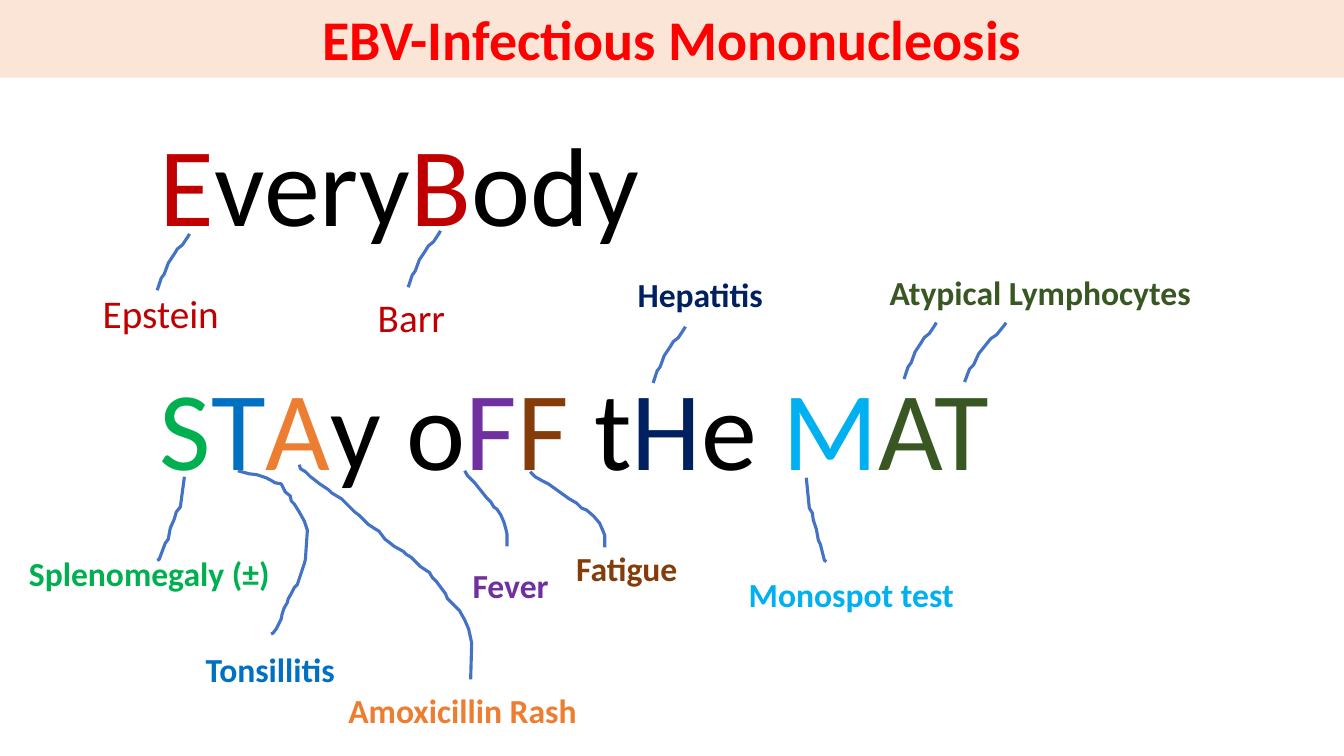
"""Build the EBV infectious mononucleosis mnemonic slide."""
from pptx import Presentation
from pptx.dml.color import RGBColor
from pptx.enum.shapes import MSO_SHAPE
from pptx.enum.text import MSO_ANCHOR as Anchor, MSO_AUTO_SIZE as AutoSize, PP_ALIGN as Align
from pptx.util import Cm, Pt

COLORS = {
    "banner": "FBE5D6", "heading": "FF0000", "stroke": "4472C4", "plain": "000000",
    "virus": "C00000", "spleen": "00B050", "tonsil": "0070C0", "rash": "ED7D31",
    "fever": "7030A0", "fatigue": "843C0B", "liver": "002060", "monospot": "00B0F0",
    "lymphocyte": "385723",
}
MNEMONIC = [
    [("E", "virus"), ("very", "plain"), ("B", "virus"), ("ody", "plain")],
    [("S", "spleen"), ("T", "tonsil"), ("A", "rash"), ("y o", "plain"),
     ("F", "fever"), ("F ", "fatigue"), ("t", "plain"), ("H", "liver"),
     ("e ", "plain"), ("M", "monospot"), ("AT", "lymphocyte")],
]
VIRUS_NAMES = [("Epstein", 2.34, 7.16, 3.48), ("Barr", 9.27, 7.26, 2.24)]
SYMPTOMS = [
    ("Splenomegaly (±)", "spleen", 0.48, 13.82, 6.64),
    ("Tonsillitis", "tonsil", 4.93, 16.23, 3.81),
    ("Amoxicillin Rash", "rash", 8.53, 17.27, 6.32),
    ("Fever", "fever", 11.66, 14.1, 2.46),
    ("Fatigue", "fatigue", 14.27, 13.67, 3.1),
    ("Hepatitis", "liver", 15.82, 6.78, 3.71),
    ("Monospot test", "monospot", 18.62, 14.33, 5.74),
    ("Atypical Lymphocytes", "lymphocyte", 22.17, 6.73, 8.18),
]

RISING = [(0, 60), (4, 48), (7, 44), (11, 33), (17, 24), (20, 19), (25, 15), (31, 6), (32, 4)]
FALLING = [(0, 0), (-4, 30), (-8, 35), (-10, 42), (-14, 51), (-16, 62), (-19, 66),
           (-25, 82), (-27, 83)]
BENDING = [(0, 0), (3, 5), (7, 9), (10, 12), (14, 17), (18, 22), (22, 27), (26, 31),
           (29, 36), (32, 38), (36, 44), (39, 51), (41, 58), (42, 63), (42, 75)]
TO_TONSILLITIS = [
    (0, 0), (11, 3), (19, 4), (28, 7), (32, 9), (37, 12), (43, 13), (47, 21), (52, 25),
    (53, 30), (56, 33), (61, 41), (66, 50), (69, 59), (67, 88), (66, 92), (59, 113),
    (56, 116), (53, 122), (50, 127), (49, 131), (46, 136), (44, 142), (43, 147),
    (40, 153), (38, 157), (35, 161), (33, 162)]
TO_RASH = [
    (0, 0), (1, 4), (6, 7), (11, 12), (15, 15), (20, 19), (29, 25), (32, 28), (42, 34),
    (50, 42), (55, 47), (59, 50), (68, 59), (74, 63), (79, 66), (85, 74), (89, 77),
    (94, 81), (103, 86), (106, 89), (111, 92), (120, 101), (129, 107), (132, 112),
    (136, 116), (142, 124), (145, 128), (147, 133), (151, 137), (159, 145), (164, 154),
    (168, 163), (171, 177), (170, 213)]
STROKES = [
    (RISING, 156, 228, 1, 1), (RISING, 405, 225, 1, 1), (RISING, 648, 320, 1, 1),
    (RISING, 897, 316, 1, 1), (RISING, 957, 316, 1.28, 1.05),
    (FALLING, 183, 473, 1, 1), (FALLING, 800, 474, -0.74, 1),
    (BENDING, 461, 467, 1, 1), (BENDING, 526, 468, 1.76, 1),
    (TO_TONSILLITIS, 236, 467, 1, 1), (TO_RASH, 297, 461, 1, 1),
]


class MnemonicSlide:
    """Hold the slide and its style, and draw each kind of element."""

    font = "Calibri"
    stroke_unit = Cm(2.54) / 100

    def __init__(self, slide):
        """Keep the slide that receives the elements."""
        self.shapes = slide.shapes

    def color(self, key):
        """Return the named colour."""
        return RGBColor.from_string(COLORS[key])

    def run(self, paragraph, words, key, size, bold=False):
        """Add one styled run."""
        run = paragraph.add_run()
        run.text = words
        run.font.name = self.font
        run.font.size = Pt(size)
        run.font.bold = bold
        run.font.color.rgb = self.color(key)

    def banner(self, words):
        """Draw the heading band across the top."""
        band = self.shapes.add_shape(MSO_SHAPE.RECTANGLE, 0, 0, Cm(33.87), Cm(1.96))
        band.shadow.inherit = False
        band.fill.solid()
        band.fill.fore_color.rgb = self.color("banner")
        band.line.fill.background()
        frame = band.text_frame
        frame.vertical_anchor = Anchor.TOP
        frame.auto_size = AutoSize.SHAPE_TO_FIT_TEXT
        heading = frame.paragraphs[0]
        heading.alignment = Align.CENTER
        self.run(heading, words, "heading", 40, True)

    def mnemonic(self, lines):
        """Write the large mnemonic sentence."""
        box = self.shapes.add_textbox(Cm(3.78), Cm(2.87), Cm(29.21), Cm(10.01))
        frame = box.text_frame
        frame.word_wrap = True
        frame.vertical_anchor = Anchor.MIDDLE
        for index, pieces in enumerate(lines):
            line = frame.add_paragraph() if index else frame.paragraphs[0]
            line.line_spacing = 0.9
            line.space_before = Pt(88 * index)
            for words, key in pieces:
                self.run(line, words, key, 80)

    def label(self, words, key, left, top, width, height=1.27, size=24, bold=True):
        """Write one label."""
        box = self.shapes.add_textbox(Cm(left), Cm(top), Cm(width), Cm(height))
        frame = box.text_frame
        frame.word_wrap = False
        frame.auto_size = AutoSize.SHAPE_TO_FIT_TEXT
        self.run(frame.paragraphs[0], words, key, size, bold)

    def stroke(self, offsets, left, top, stretch_x, stretch_y):
        """Draw one hand-drawn link between a letter and its label."""
        start, *rest = [(left + x * stretch_x, top + y * stretch_y) for x, y in offsets]
        builder = self.shapes.build_freeform(*start, scale=self.stroke_unit)
        builder.add_line_segments(rest, close=False)
        link = builder.convert_to_shape()
        link.shadow.inherit = False
        link.fill.background()
        link.line.color.rgb = self.color("stroke")
        link.line.width = Pt(2.25)


def main():
    """Assemble and save the slide."""
    deck = Presentation()
    deck.slide_width, deck.slide_height = Cm(33.87), Cm(19.05)
    page = MnemonicSlide(deck.slides.add_slide(deck.slide_layouts[6]))
    page.mnemonic(MNEMONIC)
    for words, left, top, width in VIRUS_NAMES:
        page.label(words, "virus", left, top, width, 1.45, 28, False)
    for symptom in SYMPTOMS:
        page.label(*symptom)
    for stroke in STROKES:
        page.stroke(*stroke)
    page.banner("EBV-Infectious Mononucleosis")
    deck.save("out.pptx")


if __name__ == "__main__":
    main()
